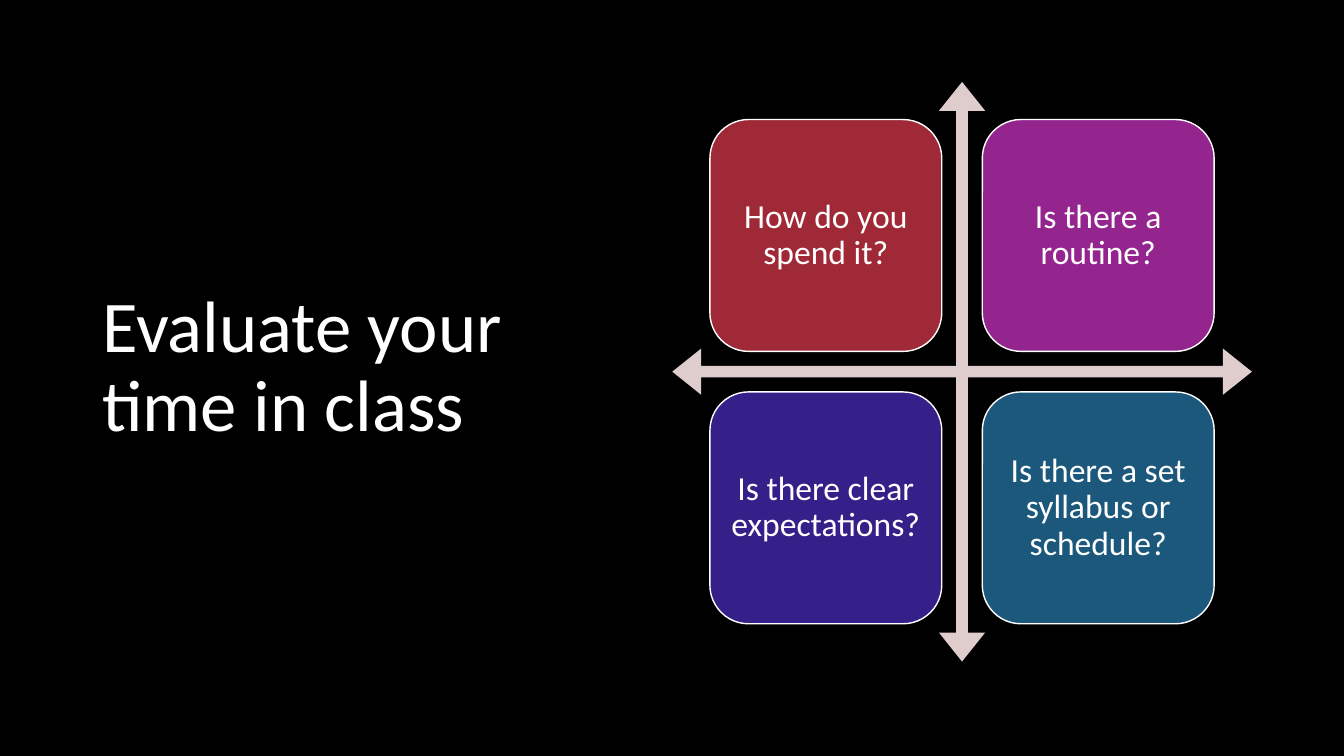
"""Build the slide about evaluating time in class."""
from pptx import Presentation
from pptx.dml.color import RGBColor
from pptx.enum.shapes import MSO_SHAPE
from pptx.enum.text import MSO_ANCHOR, PP_ALIGN
from pptx.util import Pt

QUAD_ARROW = MSO_SHAPE.QUAD_ARROW
ROUNDED = MSO_SHAPE.ROUNDED_RECTANGLE
MIDDLE = MSO_ANCHOR.MIDDLE
LEFT, CENTER = PP_ALIGN.LEFT, PP_ALIGN.CENTER

FONT = "Calibri"
BLACK, WHITE, ROSE = "000000", "FFFFFF", "DFCDCE"
MATRIX_LEFT, MATRIX_TOP, MATRIX_SIZE = 480.2, 58.5, 414
TILE_SIZE = 0.4 * MATRIX_SIZE
TILE_MARGIN = 0.065 * MATRIX_SIZE
TILE_PITCH = MATRIX_SIZE - 2 * TILE_MARGIN - TILE_SIZE
QUESTIONS = [
    ("How do you spend it?", "9F2936"),
    ("Is there a routine?", "94248E"),
    ("Is there clear expectations?", "351F88"),
    ("Is there a set syllabus or schedule?", "1B587C"),
]


def color(value):
    """Return the RGB colour for a hex string."""
    return RGBColor.from_string(value)


def set_text(sp, text, size=24, align=CENTER, fill=WHITE, after=0):
    """Write one formatted paragraph into a shape, centred vertically."""
    tf = sp.text_frame
    tf.word_wrap = True
    tf.vertical_anchor = MIDDLE
    tf.margin_left = tf.margin_right = Pt(7.2)
    p = tf.paragraphs[0]
    p.alignment = align
    p.line_spacing = 0.9
    p.space_after = Pt(after)
    r = p.add_run()
    r.text = text
    r.font.name = FONT
    r.font.size = Pt(size)
    r.font.color.rgb = color(fill)


def add_title(s, text):
    """Add the slide title on the left."""
    sp = s.shapes.add_textbox(Pt(66), Pt(44), Pt(383), Pt(438.5))
    set_text(sp, text, size=52, align=LEFT)


def add_box(s, kind, left, top, size, fill, line=None):
    """Add a square preset shape with a fill and an optional outline."""
    sp = s.shapes.add_shape(kind, Pt(left), Pt(top), Pt(size), Pt(size))
    sp.shadow.inherit = False
    sp.fill.solid()
    sp.fill.fore_color.rgb = color(fill)
    if line:
        sp.line.color.rgb = color(line)
        sp.line.width = Pt(1)
    else:
        sp.line.fill.background()
    return sp


def add_axes(s):
    """Add the four-way arrow behind the tiles."""
    sp = add_box(s, QUAD_ARROW, MATRIX_LEFT, MATRIX_TOP, MATRIX_SIZE, ROSE)
    for i, ratio in enumerate((0.02, 0.04, 0.05)):
        sp.adjustments[i] = ratio


def add_tile(s, index, text, fill):
    """Add one question tile at its place in the two by two grid."""
    row, col = divmod(index, 2)
    left = MATRIX_LEFT + TILE_MARGIN + col * TILE_PITCH
    top = MATRIX_TOP + TILE_MARGIN + row * TILE_PITCH
    sp = add_box(s, ROUNDED, left, top, TILE_SIZE, fill, line=WHITE)
    sp.text_frame.margin_top = sp.text_frame.margin_bottom = Pt(7.2)
    set_text(sp, text, after=8.4)


def main():
    """Build and save the presentation."""
    prs = Presentation()
    prs.slide_width, prs.slide_height = Pt(960), Pt(540)
    s = prs.slides.add_slide(prs.slide_layouts[6])
    s.background.fill.solid()
    s.background.fill.fore_color.rgb = color(BLACK)
    add_title(s, "Evaluate your time in class")
    add_axes(s)
    for i, (text, fill) in enumerate(QUESTIONS):
        add_tile(s, i, text, fill)
    prs.save("out.pptx")


if __name__ == "__main__":
    main()
